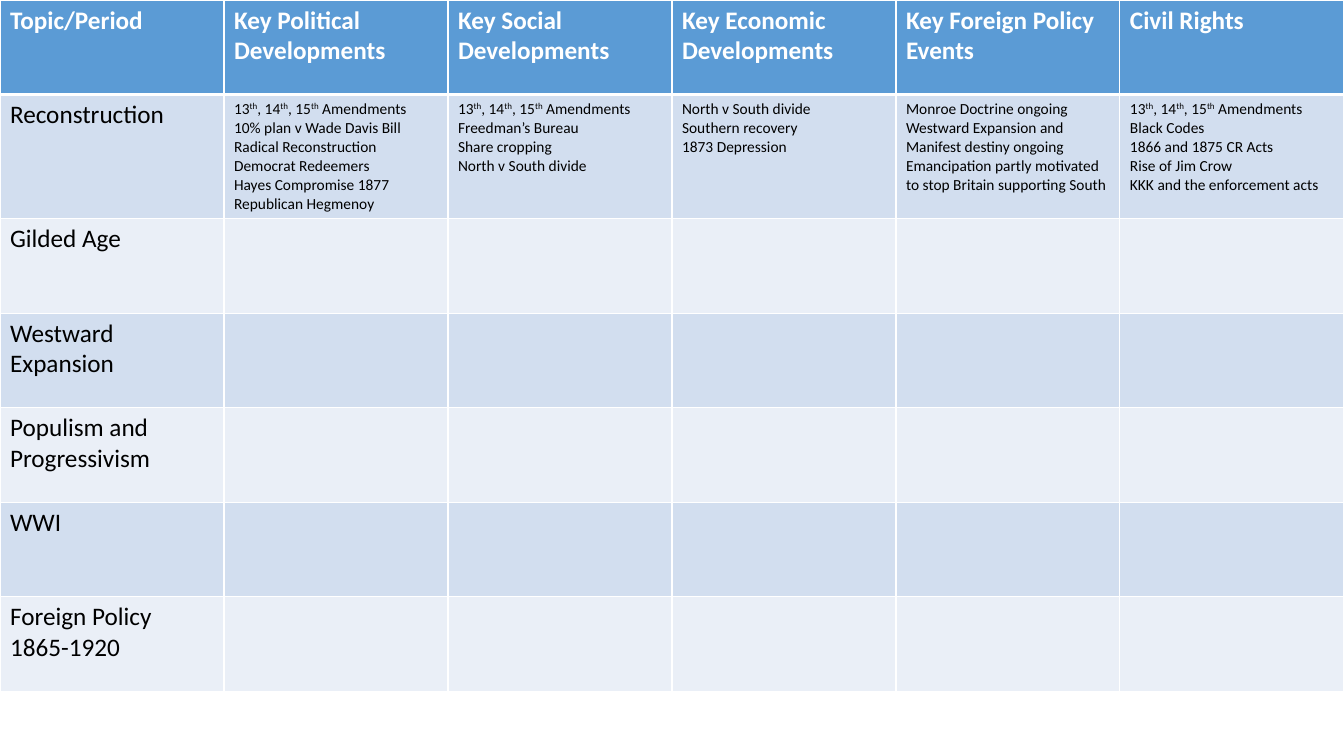
from pptx import Presentation
from pptx.dml.color import RGBColor
from pptx.oxml.ns import qn
from pptx.util import Pt
from lxml.etree import SubElement

# Content: text between ^ marks is superscript
HEADS = [
    ["Topic/Period"],
    ["Key Political Developments"],
    ["Key Social Developments"],
    ["Key Economic Developments"],
    ["Key Foreign Policy", "Events"],
    ["Civil Rights"],
]
TOPICS = ["Reconstruction", "Gilded Age", "Westward Expansion",
          "Populism and Progressivism", "WWI", "Foreign Policy 1865-1920"]
AMENDS = "13^th^, 14^th^, 15^th^ Amendments"
NOTES = {
    "Reconstruction": [
        [AMENDS, "10% plan v Wade Davis Bill", "Radical Reconstruction",
         "Democrat Redeemers", "Hayes Compromise 1877", "Republican Hegmenoy"],
        [AMENDS, "Freedman’s Bureau", "Share cropping", "North v South divide"],
        ["North v South divide", "Southern recovery", "1873 Depression"],
        ["Monroe Doctrine ongoing",
         "Westward Expansion and Manifest destiny ongoing",
         "Emancipation partly motivated to stop Britain supporting South"],
        [AMENDS, "Black Codes", "1866 and 1875 CR Acts", "Rise of Jim Crow",
         "KKK and the enforcement acts"],
    ],
}

THEME = {
    "font": "Calibri", "large": 18, "small": 11,
    "white": "FFFFFF", "black": "000000",
    "head": "5B9BD5", "bands": ("D2DEEF", "EAEFF7"),
    "thin": 1, "thick": 3,
}
WIDE, HIGH = 960, 540
ROW, TALL = 67.5, 496


def write(frame, lines, size=THEME["large"], color=THEME["black"], bold=False):
    for n, line in enumerate(lines):
        para = frame.add_paragraph() if n else frame.paragraphs[0]
        for k, part in enumerate(line.split("^")):
            run = para.add_run()
            run.text = part
            font = run.font
            font.name, font.size, font.bold = THEME["font"], Pt(size), bold
            font.color.rgb = RGBColor.from_string(color)
            if k % 2:
                run._r.get_or_add_rPr().set("baseline", "30000")


def paint(cell, fill, top, base):
    # Borders come before the fill in the cell properties
    props = cell._tc.get_or_add_tcPr()
    thin = THEME["thin"]
    for side, width in zip("LRTB", (thin, thin, top, base)):
        line = SubElement(props, qn("a:ln" + side), w=str(Pt(width)))
        solid = SubElement(line, qn("a:solidFill"))
        SubElement(solid, qn("a:srgbClr"), val=THEME["white"])
    cell.fill.solid()
    cell.fill.fore_color.rgb = RGBColor.from_string(fill)


def main():
    deck = Presentation()
    deck.slide_width, deck.slide_height = Pt(WIDE), Pt(HIGH)
    slide = deck.slides.add_slide(deck.slide_layouts[6])

    # Table grid
    rows, cols = len(TOPICS) + 1, len(HEADS)
    shape = slide.shapes.add_table(rows, cols, 0, 0, Pt(WIDE), Pt(TALL))
    table = shape.table
    for col in table.columns:
        col.width = Pt(WIDE / cols)
    for row in table.rows:
        row.height = Pt(ROW)
    shape.height = Pt(TALL)

    # Fills and borders
    for r in range(rows):
        fill = THEME["bands"][(r - 1) % 2] if r else THEME["head"]
        top = THEME["thick" if r == 1 else "thin"]
        base = THEME["thick" if r == 0 else "thin"]
        for c in range(cols):
            paint(table.cell(r, c), fill, top, base)

    # Text
    for c, lines in enumerate(HEADS):
        write(table.cell(0, c).text_frame, lines,
              color=THEME["white"], bold=True)
    for r, topic in enumerate(TOPICS, 1):
        write(table.cell(r, 0).text_frame, [topic])
        for c, lines in enumerate(NOTES.get(topic, []), 1):
            write(table.cell(r, c).text_frame, lines, size=THEME["small"])

    deck.save("out.pptx")


if __name__ == "__main__":
    main()
